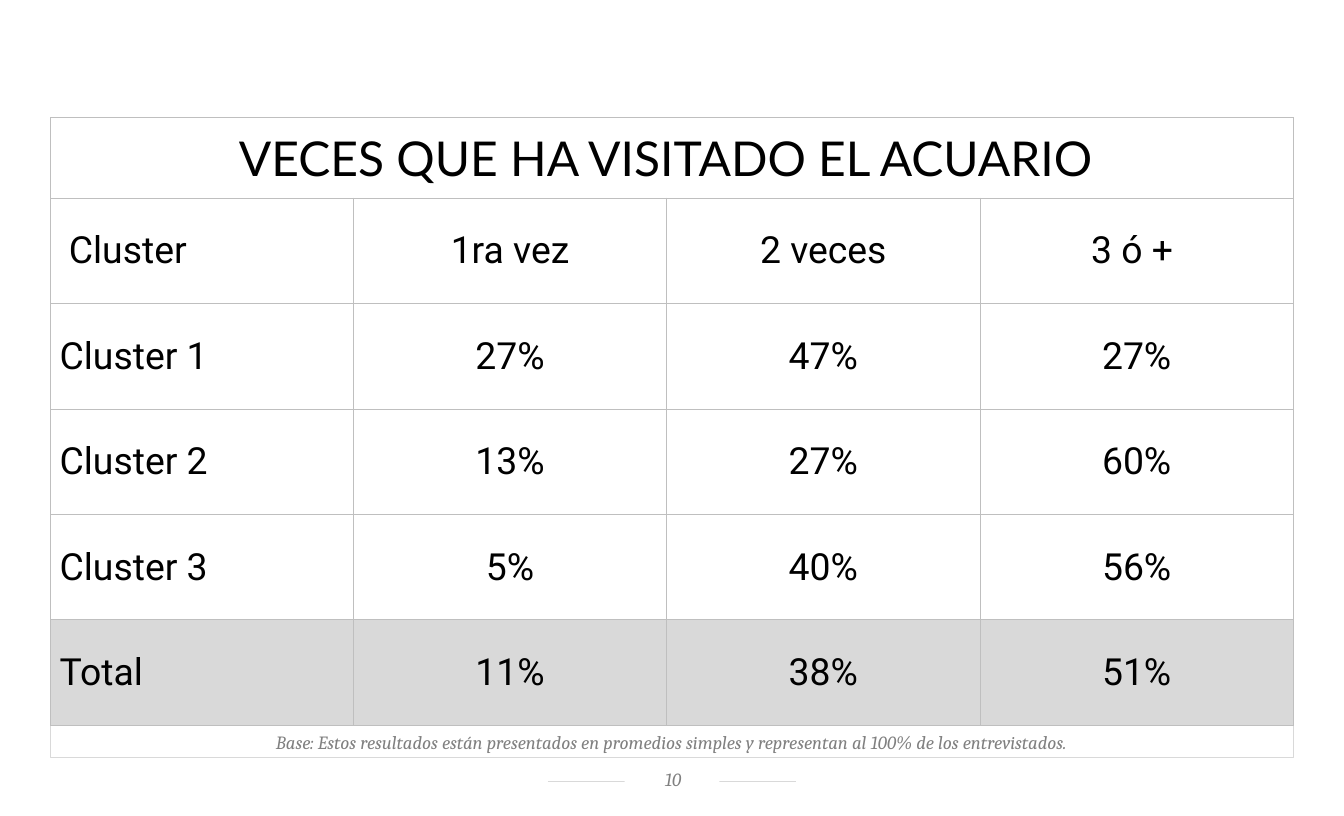
import pptx
import pptx.util
import pptx.dml.color
import pptx.enum.shapes
import pptx.enum.text
import pptx.oxml
import pptx.oxml.ns
from lxml import etree

Pt = pptx.util.Pt
RGBColor = pptx.dml.color.RGBColor
ALIGN = pptx.enum.text.PP_ALIGN
ANCHOR = pptx.enum.text.MSO_ANCHOR
qn = pptx.oxml.ns.qn

BLACK = RGBColor(0x00, 0x00, 0x00)
WHITE = RGBColor(0xFF, 0xFF, 0xFF)
GRAY = RGBColor(0x80, 0x80, 0x80)
LIGHT = RGBColor(0xD9, 0xD9, 0xD9)
BORDER = RGBColor(0xBF, 0xBF, 0xBF)

TITLE = "VECES QUE HA VISITADO EL ACUARIO "
ROWS = [
    [" Cluster", "1ra vez", "2 veces", "3 ó + "],
    ["Cluster 1", "27%", "47%", "27%"],
    ["Cluster 2", "13%", "27%", "60%"],
    ["Cluster 3", "5%", "40%", "56%"],
    ["Total", "11%", "38%", "51%"],
]
NOTE = ("Base: Estos resultados están presentados en promedios simples "
        "y representan al 100% de los entrevistados.")


def write(tf, text, font="Roboto", size=28, color=BLACK, italic=False,
          align=ALIGN.CENTER, indent=0):
    p = tf.paragraphs[0]
    p.alignment = align
    if indent:
        p._p.get_or_add_pPr().set("marL", str(Pt(indent)))
    r = p.add_run()
    r.text = text
    r.font.name = font
    r.font.size = Pt(size)
    r.font.color.rgb = color
    r.font.italic = italic


def set_borders(cell, color, width):
    tcPr = cell._tc.get_or_add_tcPr()
    for i, side in enumerate(("a:lnL", "a:lnR", "a:lnT", "a:lnB")):
        ln = etree.Element(qn(side), w=str(Pt(width)))
        fill = etree.SubElement(ln, qn("a:solidFill"))
        etree.SubElement(fill, qn("a:srgbClr"), val=str(color))
        tcPr.insert(i, ln)


def add_box(s, box, text, anchor, margins):
    sp = s.shapes.add_shape(pptx.enum.shapes.MSO_SHAPE.RECTANGLE, *map(Pt, box))
    sp.shadow.inherit = False
    sp.fill.solid()
    sp.fill.fore_color.rgb = WHITE
    sp.line.fill.background()
    tf = sp.text_frame
    tf.word_wrap = True
    tf.vertical_anchor = anchor
    tf.margin_left, tf.margin_top, tf.margin_right, tf.margin_bottom = map(Pt, margins)
    write(tf, text, font="Cambria", size=14, color=GRAY, italic=True)
    return sp


def add_footer(s, box):
    # Rule with the page number centred over it
    x, y, w, h = box
    mid = y + 11.5
    rule = s.shapes.add_connector(pptx.enum.shapes.MSO_CONNECTOR.STRAIGHT,
                                  Pt(x), Pt(mid), Pt(x + w), Pt(mid))
    rule.line.color.rgb = LIGHT
    rule.line.width = Pt(0.5)
    etree.SubElement(rule._element.spPr, qn("a:effectLst"))
    number_w = 71
    add_box(s, (x + (w - number_w) / 2, y, number_w, h), "10",
            ANCHOR.MIDDLE, (8.5, 1.5, 7, 3.6))


def add_note(s, box):
    sp = add_box(s, box, NOTE, ANCHOR.BOTTOM, (7.2, 3.6, 7.2, 3.6))
    sp.line.color.rgb = LIGHT
    sp.line.width = Pt(0.75)


def add_visits_table(s, box):
    x, y, w, h = box
    first_col, title_h = 227, 60.5
    n_rows, n_cols = len(ROWS) + 1, len(ROWS[0])
    table = s.shapes.add_table(n_rows, n_cols, *map(Pt, box)).table
    table.first_row = table.horz_banding = False
    for i, col in enumerate(table.columns):
        col.width = Pt((w - first_col) / (n_cols - 1) if i else first_col)
    for i, row in enumerate(table.rows):
        row.height = Pt((h - title_h) / len(ROWS) if i else title_h)

    # Cell look: total row is shaded
    for i, row in enumerate(table.rows):
        for cell in row.cells:
            cell.vertical_anchor = ANCHOR.MIDDLE
            cell.margin_left = cell.margin_right = cell.margin_top = Pt(0.75)
            cell.margin_bottom = Pt(0)
            if i == n_rows - 1:
                cell.fill.solid()
                cell.fill.fore_color.rgb = LIGHT
            else:
                cell.fill.background()
            set_borders(cell, BORDER, 0.5)

    # Title across the top, then the values
    table.cell(0, 0).merge(table.cell(0, n_cols - 1))
    write(table.cell(0, 0).text_frame, TITLE, font="Lato", size=36)
    for i, values in enumerate(ROWS, 1):
        for j, text in enumerate(values):
            layout = {} if j else {"align": ALIGN.LEFT, "indent": 6}
            write(table.cell(i, j).text_frame, text, **layout)


def main():
    prs = pptx.Presentation()
    prs.slide_width, prs.slide_height = Pt(1008), Pt(612)
    s = prs.slides.add_slide(prs.slide_layouts[6])
    left, width = 38, 932
    add_footer(s, (411, 574.5, 186, 21))
    add_note(s, (left, 544, width, 24.3))
    add_visits_table(s, (left, 88, width, 456))
    prs.save("out.pptx")


if __name__ == "__main__":
    main()
